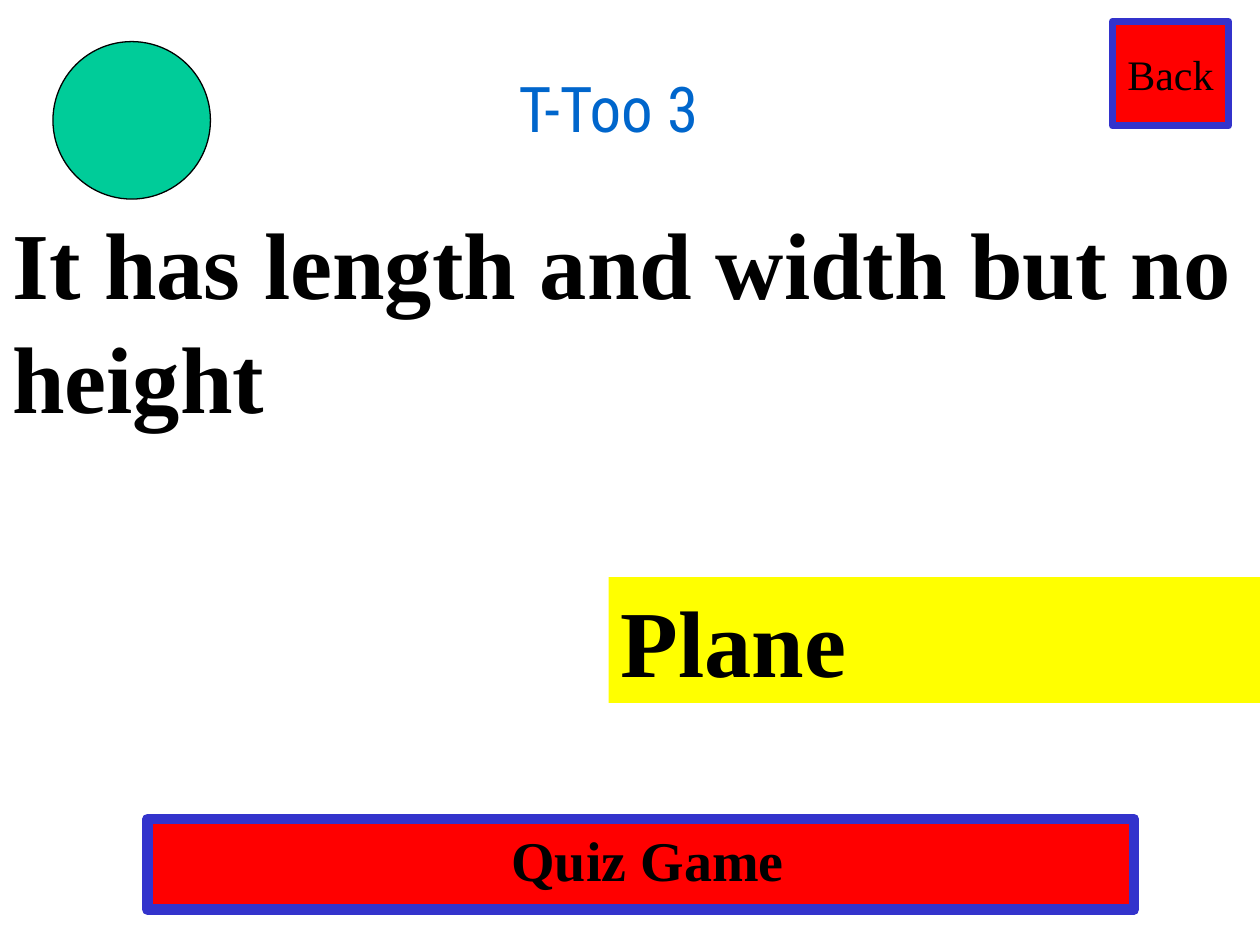
from pptx import Presentation
from pptx.dml.color import RGBColor
from pptx.enum.shapes import MSO_SHAPE as Shape
from pptx.enum.text import MSO_ANCHOR as Anchor, MSO_AUTO_SIZE as Fit, PP_ALIGN as Align
from pptx.oxml.ns import qn
from pptx.util import Inches, Pt
from lxml.etree import SubElement

WIDE, HIGH = 10, 7.5
RED = RGBColor(0xFF, 0, 0)
INDIGO = RGBColor(0x33, 0x33, 0xCC)
YELLOW = RGBColor(0xFF, 0xFF, 0)
GREEN = RGBColor(0, 0xCC, 0x99)
BLUE = RGBColor(0, 0x66, 0xCC)
BLACK = RGBColor(0, 0, 0)
SERIF, SANS = "Times New Roman", "Roboto Condensed"

# Boxes are left, top, width, height in inches; lines are colour, points
HOME = dict(box=(1.17, 6.5, 7.83, 0.72), fill=RED, line=(INDIGO, 6),
            text=" Quiz Game", size=32, bold=True, align=Align.CENTER)
TITLE = dict(box=(2.33, 0.5, 5, 0.62), text="T-Too 3", size=36, font=SANS,
             ink=BLUE, align=Align.CENTER, wrap=False)
BACK = dict(box=(8.83, 0.17, 0.92, 0.83), fill=RED, line=(INDIGO, 4),
            text="Back", size=24, align=Align.CENTER, wrap=False,
            anchor=Anchor.MIDDLE)
CLUE = dict(box=(0, 1.58, WIDE, 1.9), size=54, bold=True,
            text="It has length and width but no height")
ANSWER = dict(box=(4.83, 4.58, WIDE - 4.83, 1), fill=YELLOW,
              text="Plane", size=54, bold=True)
DOT = dict(box=(0.42, 0.33, 1.25, 1.25), kind=Shape.OVAL, fill=GREEN,
           line=(BLACK, 0.75))


def write(shape, text, size, font=SERIF, ink=BLACK, bold=False,
          align=Align.LEFT, wrap=True, anchor=Anchor.TOP):
    frame = shape.text_frame
    frame.text = text
    frame.word_wrap = wrap
    frame.vertical_anchor = anchor
    para = frame.paragraphs[0]
    para.alignment = align
    face = para.runs[0].font
    face.name, face.size, face.bold = font, Pt(size), bold
    face.color.rgb = ink
    # Bold boxes grow with their text and have half a line above it
    if bold:
        frame.auto_size = Fit.SHAPE_TO_FIT_TEXT
        gap = SubElement(para._p.get_or_add_pPr(), qn("a:spcBef"))
        SubElement(gap, qn("a:spcPct")).set("val", "50000")


def draw(slide, box, kind=Shape.RECTANGLE, fill=None, line=None, **words):
    place = [Inches(n) for n in box]
    if fill is None:
        shape = slide.shapes.add_textbox(*place)
    else:
        shape = slide.shapes.add_shape(kind, *place)
        shape.shadow.inherit = False
        shape.fill.solid()
        shape.fill.fore_color.rgb = fill
        if line:
            shape.line.color.rgb, shape.line.width = line[0], Pt(line[1])
        else:
            shape.line.fill.background()
    if words:
        write(shape, **words)


deck = Presentation()
deck.slide_width, deck.slide_height = Inches(WIDE), Inches(HIGH)
page = deck.slides.add_slide(deck.slide_layouts[6])
for part in (HOME, TITLE, BACK, CLUE, ANSWER, DOT):
    draw(page, **part)
deck.save("out.pptx")
